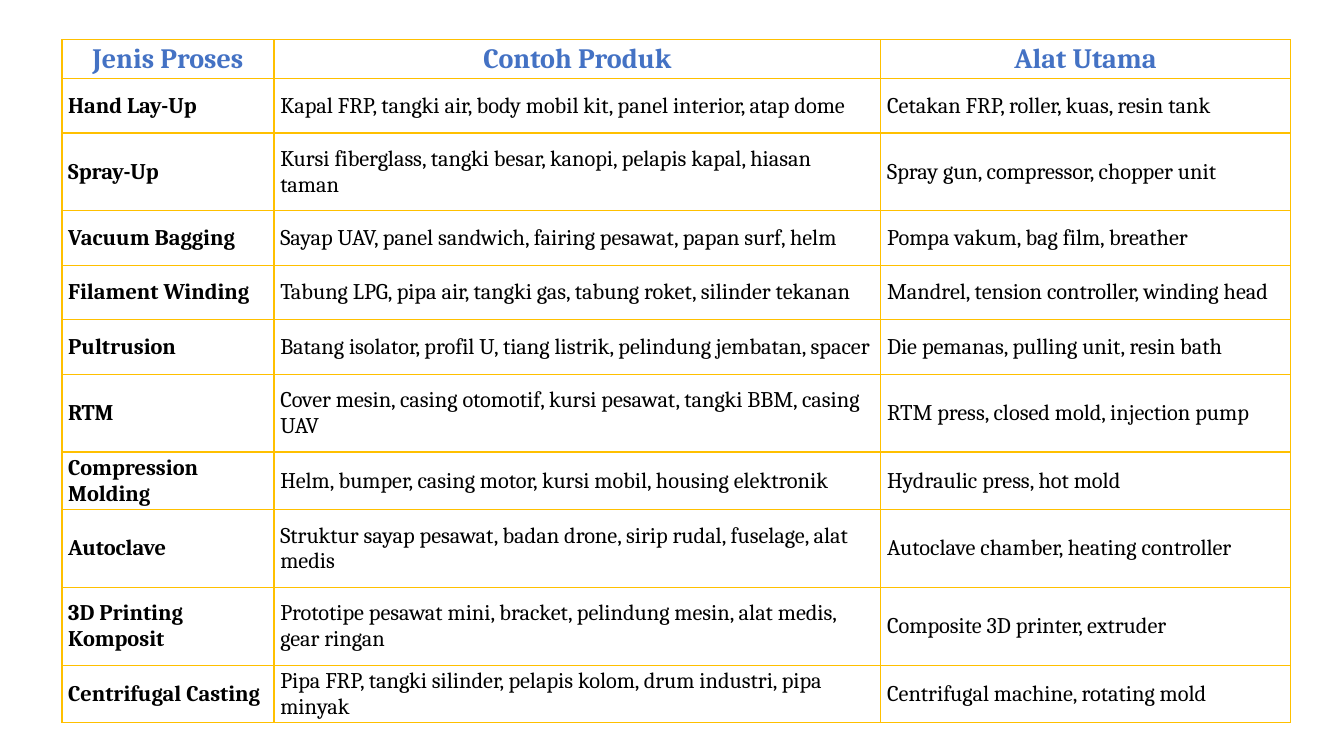
import dataclasses

import pptx
import pptx.dml.color
import pptx.enum.text
import pptx.oxml
import pptx.oxml.ns
import pptx.util

PX = 9525  # EMU per px, 96 px to the inch


@dataclasses.dataclass(frozen=True)
class Theme:
    font: str = "Cambria"
    heading: str = "4472C4"
    text: str = "000000"
    border: str = "FFC000"
    heading_size: int = 20
    text_size: int = 16
    border_width: int = 1


THEME = Theme()

HEADINGS = ("Jenis Proses", "Contoh Produk", "Alat Utama")
COLUMN_WIDTHS = (202, 578, 390)
HEADING_HEIGHT, SHORT, TALL = 30, 52, 74

PROCESSES = (
    (SHORT, "Hand Lay-Up",
     "Kapal FRP, tangki air, body mobil kit, panel interior, atap dome",
     "Cetakan FRP, roller, kuas, resin tank"),
    (TALL, "Spray-Up",
     "Kursi fiberglass, tangki besar, kanopi, pelapis kapal, hiasan taman",
     "Spray gun, compressor, chopper unit"),
    (SHORT, "Vacuum Bagging",
     "Sayap UAV, panel sandwich, fairing pesawat, papan surf, helm",
     "Pompa vakum, bag film, breather"),
    (SHORT, "Filament Winding",
     "Tabung LPG, pipa air, tangki gas, tabung roket, silinder tekanan",
     "Mandrel, tension controller, winding head"),
    (SHORT, "Pultrusion",
     "Batang isolator, profil U, tiang listrik, pelindung jembatan, spacer",
     "Die pemanas, pulling unit, resin bath"),
    (TALL, "RTM",
     "Cover mesin, casing otomotif, kursi pesawat, tangki BBM, casing UAV",
     "RTM press, closed mold, injection pump"),
    (SHORT, "Compression Molding",
     "Helm, bumper, casing motor, kursi mobil, housing elektronik",
     "Hydraulic press, hot mold"),
    (TALL, "Autoclave",
     "Struktur sayap pesawat, badan drone, sirip rudal, fuselage, alat medis",
     "Autoclave chamber, heating controller"),
    (TALL, "3D Printing Komposit",
     "Prototipe pesawat mini, bracket, pelindung mesin, alat medis, gear ringan",
     "Composite 3D printer, extruder"),
    (SHORT, "Centrifugal Casting",
     "Pipa FRP, tangki silinder, pelapis kolom, drum industri, pipa minyak",
     "Centrifugal machine, rotating mold"),
)


def px(length):
    return pptx.util.Emu(length * PX)


def write_text(tf, text, size=THEME.text_size, color=THEME.text, bold=False,
               align=pptx.enum.text.PP_ALIGN.LEFT):
    p = tf.paragraphs[0]
    p.alignment = align
    r = p.add_run()
    r.text = text
    r.font.name = THEME.font
    r.font.size = pptx.util.Pt(size)
    r.font.bold = bold
    r.font.color.rgb = pptx.dml.color.RGBColor.from_string(color)


def add_borders(cell):
    """Draw all four edges; they must come before the fill in tcPr."""
    tc_pr = cell._tc.get_or_add_tcPr()
    width = pptx.util.Pt(THEME.border_width)
    for i, edge in enumerate(("lnL", "lnR", "lnT", "lnB")):
        tc_pr.insert(i, pptx.oxml.parse_xml(
            f'<a:{edge} {pptx.oxml.ns.nsdecls("a")} w="{width}">'
            f'<a:solidFill><a:srgbClr val="{THEME.border}"/></a:solidFill>'
            f'</a:{edge}>'))


def fill_cell(cell, text, **text_format):
    cell.margin_left = cell.margin_right = px(6)
    cell.margin_top = cell.margin_bottom = px(3)
    cell.vertical_anchor = pptx.enum.text.MSO_ANCHOR.MIDDLE
    cell.fill.background()
    add_borders(cell)
    write_text(cell.text_frame, text, **text_format)


def add_process_table(s, left, top):
    heights = [HEADING_HEIGHT] + [process[0] for process in PROCESSES]
    table = s.shapes.add_table(
        len(heights), len(COLUMN_WIDTHS), px(left), px(top),
        px(sum(COLUMN_WIDTHS)), px(sum(heights))).table
    table.first_row = table.horz_banding = False
    for column, width in zip(table.columns, COLUMN_WIDTHS):
        column.width = px(width)
    for row, height in zip(table.rows, heights):
        row.height = px(height)

    for col, heading in enumerate(HEADINGS):
        fill_cell(table.cell(0, col), heading, size=THEME.heading_size,
                  color=THEME.heading, bold=True,
                  align=pptx.enum.text.PP_ALIGN.CENTER)
    for row, (_, *texts) in enumerate(PROCESSES, start=1):
        for col, text in enumerate(texts):
            fill_cell(table.cell(row, col), text, bold=col == 0)


def main():
    prs = pptx.Presentation()
    prs.slide_width, prs.slide_height = px(1280), px(720)
    s = prs.slides.add_slide(prs.slide_layouts[6])
    add_process_table(s, left=59, top=38)
    prs.save("out.pptx")


if __name__ == "__main__":
    main()
